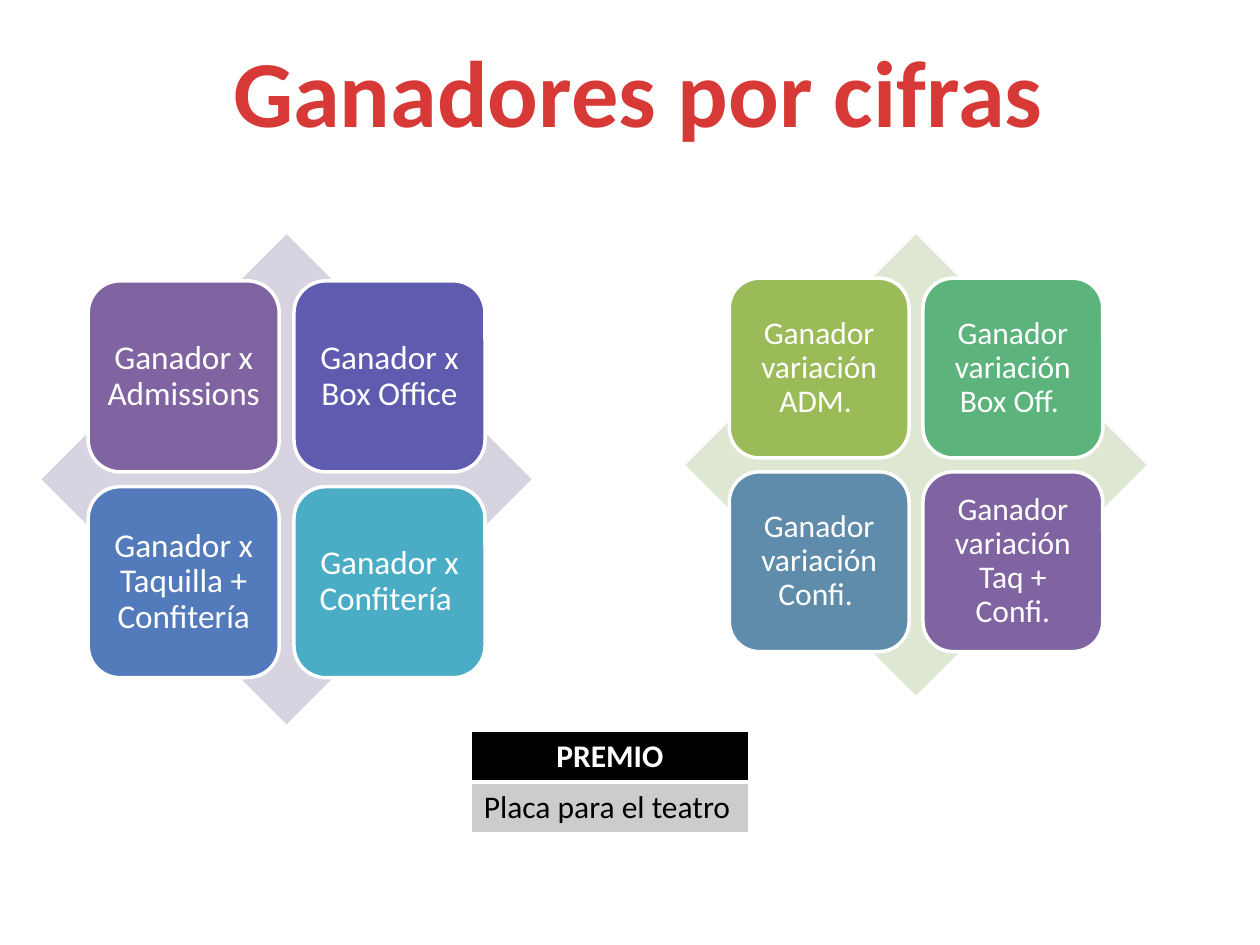
import dataclasses

import pptx
import pptx.dml.color
import pptx.enum.shapes
import pptx.enum.text
import pptx.oxml
import pptx.oxml.ns
import pptx.util

Pt = pptx.util.Pt
Shape = pptx.enum.shapes.MSO_SHAPE
Align = pptx.enum.text.PP_ALIGN
Anchor = pptx.enum.text.MSO_ANCHOR


@dataclasses.dataclass(frozen=True)
class Theme:
    font: str = "Calibri"
    title_size: float = 54
    table_size: float = 18
    title: str = "D73A36"
    white: str = "FFFFFF"
    black: str = "000000"
    grey: str = "CCCCCC"
    lilac: str = "D8D3E0"
    sage: str = "DEE7D1"
    purple: str = "8064A2"
    indigo: str = "5F5BAE"
    blue: str = "537ABA"
    teal: str = "4BACC6"
    lime: str = "9BBB59"
    green: str = "5CB37C"
    steel: str = "608CAB"


def rgb(value):
    return pptx.dml.color.RGBColor.from_string(value)


def assign(target, values):
    for name, value in values.items():
        setattr(target, name, value)


def line_xml(tag, color, width):
    return pptx.oxml.parse_xml(
        f'<a:{tag} {pptx.oxml.ns.nsdecls("a")} w="{int(Pt(width))}">'
        f'<a:solidFill><a:srgbClr val="{color}"/></a:solidFill></a:{tag}>'
    )


class SlideBuilder:
    def __init__(self, page, theme):
        self.page = page
        self.theme = theme

    def text(self, frame, words, size, color, bold=False, align=Align.CENTER, spacing=None):
        para = frame.paragraphs[0]
        assign(para, {"alignment": align, "line_spacing": spacing})
        span = para.add_run()
        span.text = words
        assign(span.font, {"name": self.theme.font, "size": Pt(size), "bold": bold})
        span.font.color.rgb = rgb(color)
        return span

    def title(self, words, left, top, width, height):
        box = self.page.shapes.add_textbox(Pt(left), Pt(top), Pt(width), Pt(height))
        frame = box.text_frame
        assign(frame, {"word_wrap": False, "auto_size": pptx.enum.text.MSO_AUTO_SIZE.SHAPE_TO_FIT_TEXT})
        span = self.text(frame, words, self.theme.title_size, self.theme.title, bold=True)
        # The outline comes before the fill in the run properties
        span._r.get_or_add_rPr().insert(0, line_xml("ln", self.theme.title, 1.42))

    def shape(self, group, kind, left, top, side, fill):
        shape = group.shapes.add_shape(kind, Pt(left), Pt(top), Pt(side), Pt(side))
        shape.shadow.inherit = False
        shape.fill.solid()
        shape.fill.fore_color.rgb = rgb(fill)
        shape.line.fill.background()
        return shape

    def matrix(self, left, top, side, fill, size, inset, tiles):
        """A diamond with four rounded tiles, all in proportion to its side."""
        group = self.page.shapes.add_group_shape()
        self.shape(group, Shape.DIAMOND, left, top, side, fill)
        margin, step, tile_side = 0.095 * side, 0.42 * side, 0.39 * side
        for index, (words, color) in enumerate(tiles):
            row, column = divmod(index, 2)
            tile = self.shape(group, Shape.ROUNDED_RECTANGLE, left + margin + column * step,
                              top + margin + row * step, tile_side, color)
            tile.line.color.rgb = rgb(self.theme.white)
            tile.line.width = Pt(2)
            frame = tile.text_frame
            assign(frame, {"word_wrap": True, "vertical_anchor": Anchor.MIDDLE})
            for edge in ("left", "top", "right", "bottom"):
                setattr(frame, f"margin_{edge}", Pt(inset))
            self.text(frame, words, size, self.theme.white, spacing=0.9)

    def table(self, left, top, width, row_height, rows):
        frame = self.page.shapes.add_table(len(rows), 1, Pt(left), Pt(top), Pt(width),
                                           Pt(row_height * len(rows)))
        for index, (words, fill, style) in enumerate(rows):
            cell = frame.table.cell(index, 0)
            self.text(cell.text_frame, words, self.theme.table_size, **style)
            # Thick rule between the header and the body
            widths = {"lnL": 1, "lnR": 1, "lnT": 3 if index else 1, "lnB": 1 if index else 3}
            properties = cell._tc.get_or_add_tcPr()
            for tag, line_width in widths.items():
                properties.append(line_xml(tag, self.theme.white, line_width))
            cell.fill.solid()
            cell.fill.fore_color.rgb = rgb(fill)


def main():
    theme = Theme()
    deck = pptx.Presentation()
    assign(deck, {"slide_width": Pt(720), "slide_height": Pt(540)})
    builder = SlideBuilder(deck.slides.add_slide(deck.slide_layouts[6]), theme)

    # Prize table
    builder.table(269.3, 417.6, 158.4, 29.2, [
        ("PREMIO", theme.black, {"color": theme.white, "bold": True}),
        ("Placa para el teatro", theme.grey, {"color": theme.black, "align": Align.LEFT}),
    ])

    # Title
    builder.title("Ganadores por cifras", 123.8, 15.1, 481.7, 72.7)

    # Winners by total
    builder.matrix(23.8, 133.9, 280, theme.lilac, 19, 5.7, [
        ("Ganador x Admissions", theme.purple),
        ("Ganador x Box Office", theme.indigo),
        ("Ganador x Taquilla + Confitería", theme.blue),
        ("Ganador x Confitería ", theme.teal),
    ])

    # Winners by variation
    builder.matrix(391.7, 133.9, 263.5, theme.sage, 18, 5.2, [
        ("Ganador variación ADM. ", theme.lime),
        ("Ganador variación Box Off. ", theme.green),
        ("Ganador variación Confi. ", theme.steel),
        ("Ganador variación Taq + Confi.", theme.purple),
    ])

    deck.save("out.pptx")


if __name__ == "__main__":
    main()
